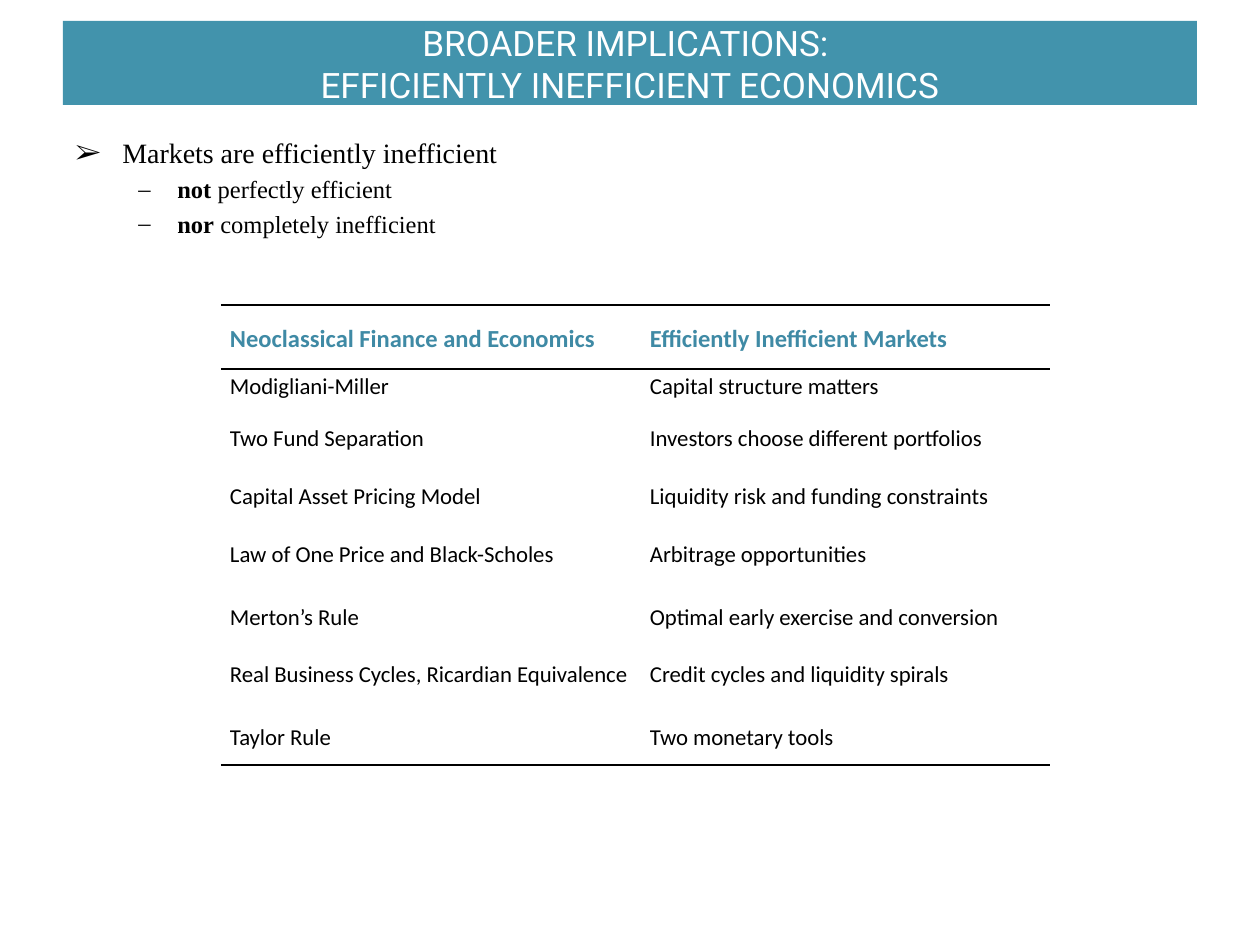
from lxml import etree
from pptx import Presentation
from pptx import util as u
from pptx.dml.color import RGBColor
from pptx.enum import shapes, text
from pptx.oxml.ns import qn

TITLE = "BROADER IMPLICATIONS: \vEFFICIENTLY INEFFICIENT ECONOMICS"
BULLETS = [
    (0, "", "Markets are efficiently inefficient"),
    (1, "not ", "perfectly efficient"),
    (1, "nor", " completely inefficient"),
]
COMPARISON = [
    ("Neoclassical Finance and Economics", "Efficiently Inefficient Markets"),
    ("Modigliani-Miller", "Capital structure matters"),
    ("Two Fund Separation", "Investors choose different portfolios"),
    ("Capital Asset Pricing Model", "Liquidity risk and funding constraints"),
    ("Law of One Price and Black-Scholes", "Arbitrage opportunities"),
    ("Merton’s Rule", "Optimal early exercise and conversion"),
    ("Real Business Cycles, Ricardian Equivalence", "Credit cycles and liquidity spirals"),
    ("Taylor Rule", "Two monetary tools"),
]
COLUMN_WIDTHS = [420, 409]
ROW_HEIGHTS = [64, 52, 58, 58, 63, 57, 63, 45]


def px(length):
    return u.Emu(round(length * 914400 / 126))


def rgb(value):
    return RGBColor.from_string(value)


class Deck:
    TEAL, HEADING, INK, WHITE = "4293AC", "3F8AA5", "000000", "FFFFFF"
    # bullet sign, text size, left indent, hanging indent
    LEVELS = [("➢", 16, 47, 47), ("–", 14, 102, 39)]

    def __init__(self):
        self.prs = Presentation()
        self.prs.slide_width, self.prs.slide_height = px(1260), px(945)
        self.slide = self.prs.slides.add_slide(self.prs.slide_layouts[6])

    def style(self, run, face, size, color, bold=False):
        run.font.name, run.font.size, run.font.bold = face, u.Pt(size), bold
        run.font.color.rgb = rgb(color)

    def banner(self, left, top, width, height, words):
        bar = self.slide.shapes.add_shape(
            shapes.MSO_SHAPE.RECTANGLE, px(left), px(top), px(width), px(height))
        bar.shadow.inherit = False
        bar.fill.solid()
        bar.fill.fore_color.rgb = rgb(self.TEAL)
        bar.line.fill.background()
        frame = bar.text_frame
        frame.text = words
        frame.word_wrap = True
        frame.vertical_anchor = text.MSO_ANCHOR.MIDDLE
        heading = frame.paragraphs[0]
        heading.alignment = text.PP_ALIGN.CENTER
        for run in heading.runs:
            self.style(run, "Roboto", 20, self.WHITE)

    def bullets(self, left, top, width, height, items):
        frame = self.slide.shapes.add_textbox(
            px(left), px(top), px(width), px(height)).text_frame
        frame.word_wrap = True
        frame.margin_top = px(10)
        for i, (level, stressed, plain) in enumerate(items):
            point = frame.add_paragraph() if i else frame.paragraphs[0]
            sign, size, indent, hanging = self.LEVELS[level]
            point.level = level
            if i:
                point.space_before = u.Pt(size * 0.2)
            props = point._p.get_or_add_pPr()
            props.set("marL", str(px(indent)))
            props.set("indent", str(-px(hanging)))
            etree.SubElement(props, qn("a:buFont"), typeface="Times New Roman")
            etree.SubElement(props, qn("a:buChar"), char=sign)
            for words, bold in ((stressed, True), (plain, False)):
                if words:
                    run = point.add_run()
                    run.text = words
                    self.style(run, "Times New Roman", size, self.INK, bold)

    def borders(self, cell, ruled):
        """Rule the named sides (T, B) and clear the others."""
        props = cell._tc.get_or_add_tcPr()
        for side in "LRTB":
            line = etree.SubElement(props, qn("a:ln" + side), w=str(u.Pt(1.5)))
            if side in ruled:
                fill = etree.SubElement(line, qn("a:solidFill"))
                etree.SubElement(fill, qn("a:srgbClr"), val=self.INK)
            else:
                etree.SubElement(line, qn("a:noFill"))

    def table(self, left, top, widths, heights, rows):
        grid = self.slide.shapes.add_table(
            len(rows), len(widths), px(left), px(top),
            px(sum(widths)), px(sum(heights))).table
        grid.first_row = grid.horz_banding = False
        for column, width in zip(grid.columns, widths):
            column.width = px(width)
        ruled = {0: "TB", 1: "T", len(rows) - 1: "B"}
        for r, (height, entries) in enumerate(zip(heights, rows)):
            grid.rows[r].height = px(height)
            for c, words in enumerate(entries):
                self.cell(grid.cell(r, c), words, r == 0, ruled.get(r, ""))

    def cell(self, cell, words, header, ruled):
        cell.margin_left = cell.margin_right = px(9)
        cell.margin_top = cell.margin_bottom = 0
        cell.vertical_anchor = text.MSO_ANCHOR.MIDDLE if header else text.MSO_ANCHOR.TOP
        self.borders(cell, ruled)
        cell.fill.background()
        cell.text_frame.text = words
        entry = cell.text_frame.paragraphs[0]
        entry.line_spacing = 1.15
        size, color = (14, self.HEADING) if header else (13, self.INK)
        self.style(entry.runs[0], "Calibri", size, color, header)


def main():
    deck = Deck()
    deck.bullets(63, 126, 1134, 718, BULLETS)
    deck.banner(63, 21, 1134, 84, TITLE)
    deck.table(221, 305, COLUMN_WIDTHS, ROW_HEIGHTS, COMPARISON)
    deck.prs.save("out.pptx")


if __name__ == "__main__":
    main()
